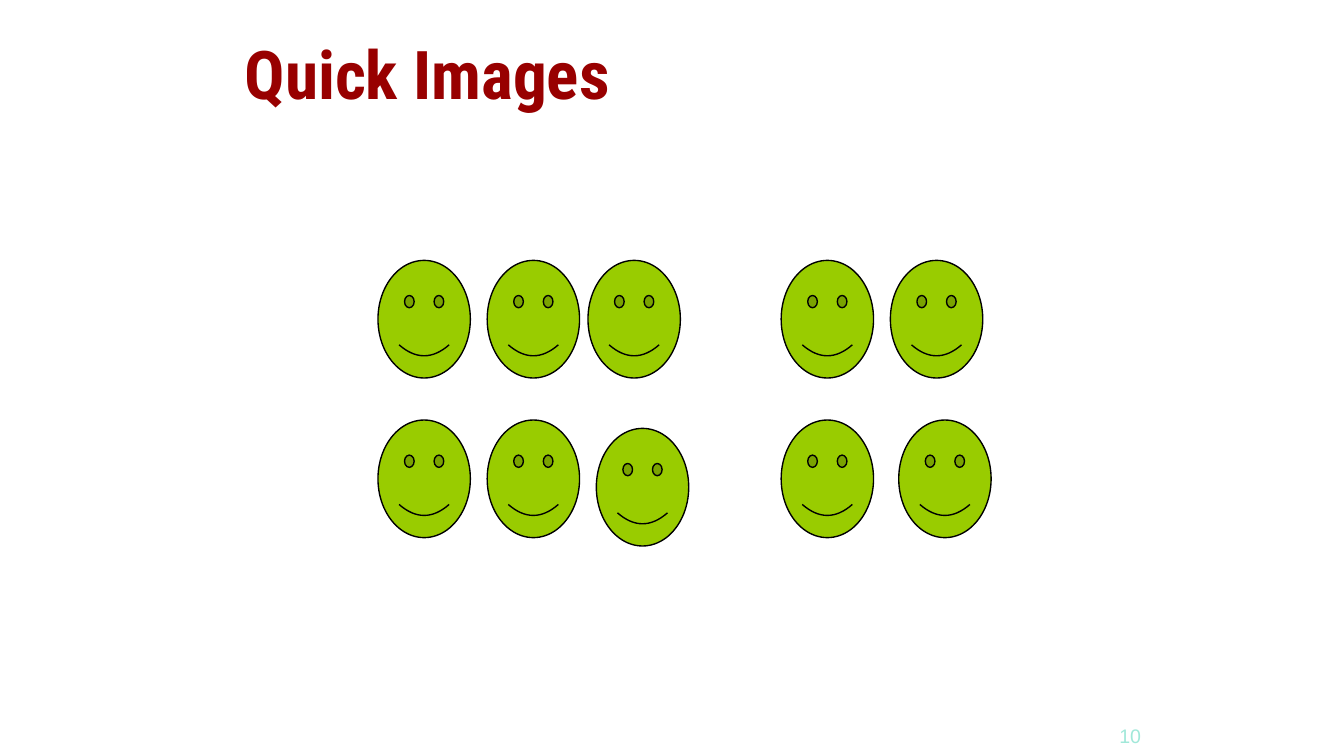
from pptx import Presentation
from pptx.dml.color import RGBColor
from pptx.enum.shapes import MSO_SHAPE
from pptx.enum.text import MSO_ANCHOR, PP_ALIGN
from pptx.util import Inches, Pt

RED = RGBColor(0x98, 0x00, 0x00)
MINT = RGBColor(0xA1, 0xE8, 0xD9)
GREEN = RGBColor(0x99, 0xCC, 0x00)
BLACK = RGBColor(0x00, 0x00, 0x00)

UNIT = Inches(1) // 16
WIDE, TALL = 11 * UNIT, 14 * UNIT
FACES = [
    (45, 31), (58, 31), (70, 31), (93, 31), (106, 31),
    (107, 50), (45, 50), (58, 50), (71, 51), (93, 50),
]


class Painter:
    """Draw styled text and smiling faces on the current slide."""

    def __init__(self, slide):
        self.slide = slide

    def text(self, box, words, font, size, color, bold=False, align=PP_ALIGN.LEFT):
        frame = self.slide.shapes.add_textbox(*map(Inches, box)).text_frame
        frame.word_wrap = True
        frame.vertical_anchor = MSO_ANCHOR.BOTTOM
        frame.margin_left = frame.margin_right = Inches(0.07)
        frame.margin_top = frame.margin_bottom = Inches(0.04)
        line = frame.paragraphs[0]
        line.alignment = align
        run = line.add_run()
        run.text = words
        run.font.name = font
        run.font.size = Pt(size)
        run.font.bold = bold
        run.font.color.rgb = color

    def face(self, col, row):
        face = self.slide.shapes.add_shape(
            MSO_SHAPE.SMILEY_FACE, col * UNIT, row * UNIT, WIDE, TALL
        )
        face.shadow.inherit = False
        face.adjustments[0] = 0.047
        face.fill.solid()
        face.fill.fore_color.rgb = GREEN
        face.line.color.rgb = BLACK
        face.line.width = Pt(0.75)


def main():
    deck = Presentation()
    deck.slide_width = Inches(10)
    deck.slide_height = Inches(10) * 9 // 16
    paint = Painter(deck.slides.add_slide(deck.slide_layouts[6]))
    paint.text((7, 5.29, 1.56, 0.31), "10", "Arial", 10.5, MINT, align=PP_ALIGN.RIGHT)
    paint.text((1.75, 0.32, 6.84, 0.56), "Quick Images", "Roboto Condensed", 36, RED, bold=True)
    for col, row in FACES:
        paint.face(col, row)
    deck.save("out.pptx")


if __name__ == "__main__":
    main()
